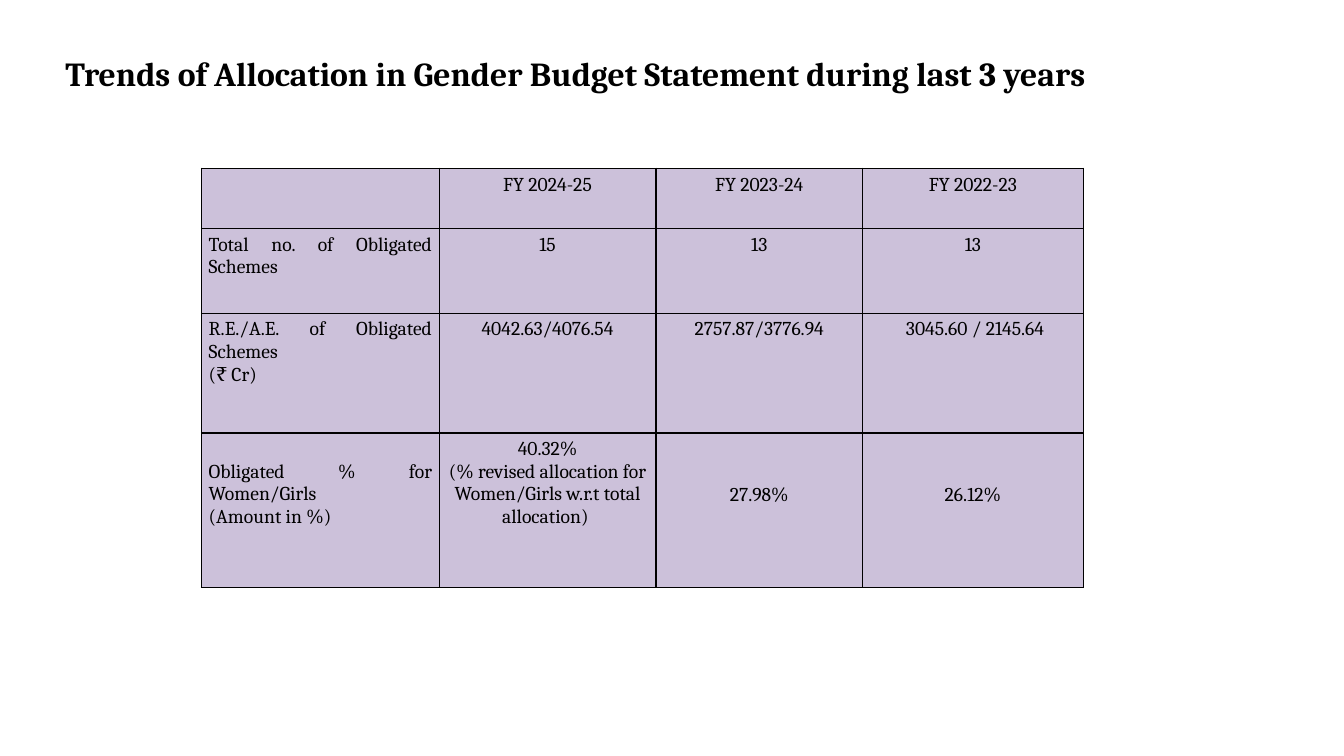
import pptx
import pptx.util
import pptx.dml.color
import pptx.enum.text
import pptx.oxml
import pptx.oxml.ns

BLACK = pptx.dml.color.RGBColor(0x00, 0x00, 0x00)
LILAC = pptx.dml.color.RGBColor(0xCC, 0xC1, 0xDA)
CENTER = pptx.enum.text.PP_ALIGN.CENTER
JUSTIFY = pptx.enum.text.PP_ALIGN.JUSTIFY
LEFT = pptx.enum.text.PP_ALIGN.LEFT
Cm = pptx.util.Cm
Pt = pptx.util.Pt

COLUMN_WIDTHS = [5.99, 5.46, 5.21, 5.56]
ROW_HEIGHTS = [1.52, 2.13, 3.02, 3.89]
TEXT_LINE = 0.57
BUDGET_ROWS = [
    ["", "FY 2024-25", "FY 2023-24", "FY 2022-23"],
    ["Total no. of Obligated Schemes", "15", "13", "13"],
    ["R.E./A.E. of Obligated Schemes\n(₹ Cr)",
     "4042.63/4076.54", "2757.87/3776.94", " 3045.60 / 2145.64"],
    ["Obligated % for Women/Girls \n(Amount in %) ",
     "40.32%\n(% revised allocation for Women/Girls w.r.t total allocation) ",
     "27.98%", "26.12%"],
]
LINES_DOWN = {(3, 0): 1, (3, 2): 2, (3, 3): 2}


def write_text(frame, text, size=14, bold=False, align=LEFT, font="Cambria",
               color=BLACK, before=0, line=None):
    """Fill a text frame, one paragraph for each line of text."""
    for index, words in enumerate(text.split("\n")):
        para = frame.paragraphs[0] if index == 0 else frame.add_paragraph()
        para.alignment = align
        para.space_before = Pt(before)
        if line:
            para.line_spacing = Pt(line)
        span = para.add_run()
        span.text = words
        span.font.name = font
        span.font.size = Pt(size)
        span.font.bold = bold
        span.font.color.rgb = color


class BudgetSlide:
    """Holds the table style and the page being built."""

    def __init__(self, page, fill=LILAC, border=BLACK, border_width=1):
        self.page = page
        self.fill = fill
        self.border = border
        self.border_width = border_width

    def title(self, text, left, top, width, height):
        box = self.page.shapes.add_textbox(Cm(left), Cm(top), Cm(width), Cm(height))
        frame = box.text_frame
        frame.word_wrap = True
        frame.margin_left = frame.margin_right = frame.margin_bottom = 0
        frame.margin_top = Cm(0.18)
        write_text(frame, text, size=24, bold=True, before=5.3, line=34.6)

    def outline(self, cell):
        properties = cell._tc.get_or_add_tcPr()
        for position, side in enumerate(("lnL", "lnR", "lnT", "lnB")):
            properties.insert(position, pptx.oxml.parse_xml(
                f'<a:{side} {pptx.oxml.ns.nsdecls("a")} w="{Pt(self.border_width)}">'
                f'<a:solidFill><a:srgbClr val="{self.border}"/></a:solidFill>'
                f'</a:{side}>'))

    def table(self, rows, left, top, widths, heights):
        table = self.page.shapes.add_table(
            len(rows), len(widths), Cm(left), Cm(top),
            Cm(sum(widths)), Cm(sum(heights))).table
        table.first_row = table.horz_banding = False
        for column, width in zip(table.columns, widths):
            column.width = Cm(width)
        for row, height in zip(table.rows, heights):
            row.height = Cm(height)
        for row_index, row in enumerate(rows):
            for column_index, text in enumerate(row):
                cell = table.cell(row_index, column_index)
                cell.margin_left = cell.margin_right = Cm(0.18)
                lines_down = LINES_DOWN.get((row_index, column_index), 0)
                cell.margin_top = Cm(0.13 + TEXT_LINE * lines_down)
                cell.margin_bottom = Cm(0.13)
                cell.fill.solid()
                cell.fill.fore_color.rgb = self.fill
                self.outline(cell)
                if text:
                    write_text(cell.text_frame, text,
                               align=CENTER if column_index else JUSTIFY)


def main():
    deck = pptx.Presentation()
    deck.slide_width = Cm(33.87)
    deck.slide_height = Cm(19.05)
    slide = BudgetSlide(deck.slides.add_slide(deck.slide_layouts[6]))
    slide.title("Trends of Allocation in Gender Budget Statement during last 3 years",
                1.65, 0.94, 29.49, 1.35)
    slide.table(BUDGET_ROWS, 5.08, 4.24, COLUMN_WIDTHS, ROW_HEIGHTS)
    deck.save("out.pptx")


if __name__ == "__main__":
    main()
